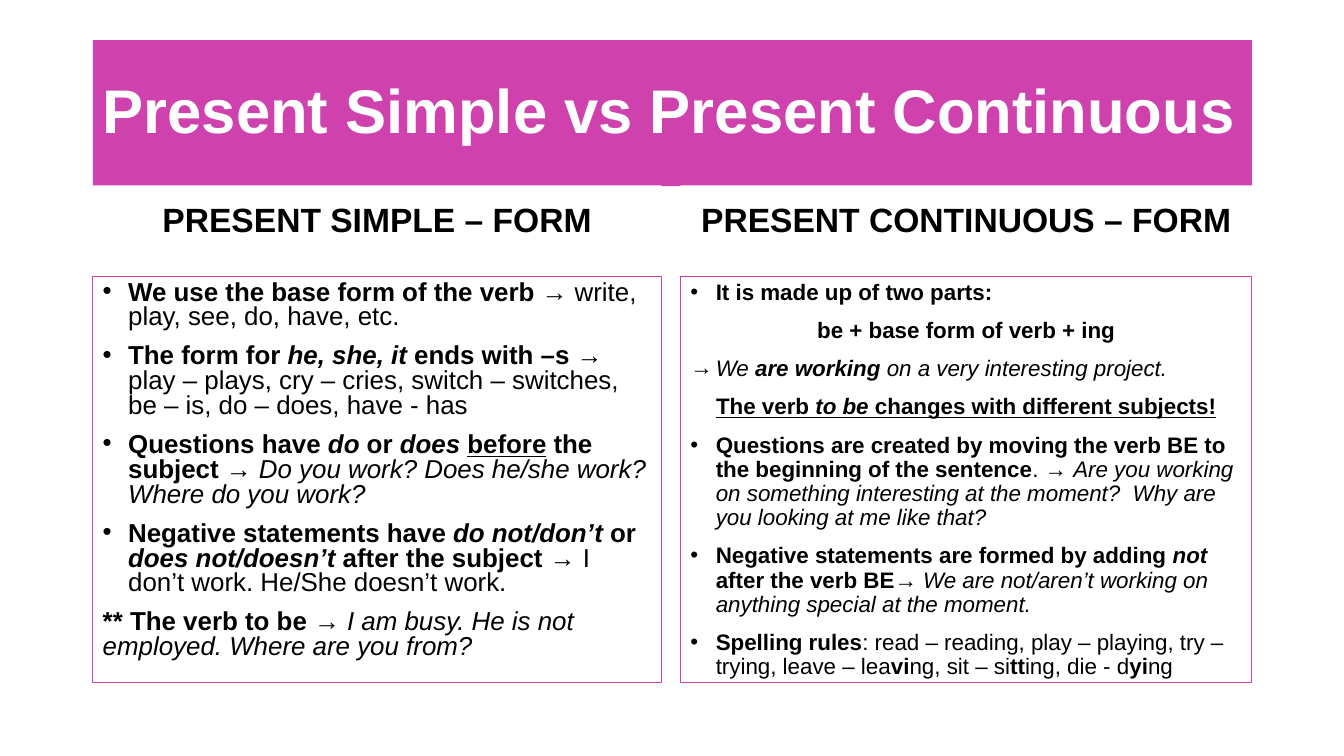
from dataclasses import dataclass

from lxml import etree
from pptx import Presentation
from pptx import util as u
from pptx.dml.color import RGBColor
from pptx.enum import text
from pptx.oxml import ns


@dataclass(frozen=True)
class Theme:
    font: str = "Arial"
    pink: RGBColor = RGBColor(0xCF, 0x41, 0xAD)
    white: RGBColor = RGBColor(0xFF, 0xFF, 0xFF)
    black: RGBColor = RGBColor(0, 0, 0)
    title_size: float = 44
    heading_size: float = 24
    simple_size: float = 18.5
    continuous_size: float = 16
    paragraph_gap: float = 10


THEME = Theme()
CENTER = text.PP_ALIGN.CENTER
HANGING = u.Cm(0.64)

# Each line: (bullet or None, alignment, runs); run styles: b bold, i italic, u underline
SIMPLE_FORM = [
    ("•", None, [("We use the base form of the verb ", "b"),
                 ("→ write, play, see, do, have, etc.", "")]),
    ("•", None, [("The form for ", "b"), ("he, she, it ", "bi"), ("ends with –s ", "b"),
                 ("→ play – plays, cry – cries, switch – switches, "
                  "be – is, do – does, have - has", "")]),
    ("•", None, [("Questions have ", "b"), ("do", "bi"), (" or ", "b"), ("does ", "bi"),
                 ("before", "bu"), (" the subject ", "b"), ("→ ", ""),
                 ("Do you work? Does he/she work? Where do you work?", "i")]),
    ("•", None, [("Negative statements have ", "b"), ("do not/don’t ", "bi"), ("or ", "b"),
                 ("does not/doesn’t ", "bi"), ("after the subject ", "b"),
                 ("→ I don’t work. He/She doesn’t work.", "")]),
    (None, None, [("** The verb to be ", "b"),
                  ("→ I am busy. He is not employed. Where are you from?", "i")]),
]
CONTINUOUS_FORM = [
    ("•", None, [("It is made up of two parts:", "b")]),
    (None, CENTER, [("be + base form of verb + ing", "b")]),
    ("→", None, [("We ", "i"), ("are working ", "bi"),
                 ("on a very interesting project.", "i")]),
    (None, CENTER, [("The verb ", "bu"), ("to be ", "biu"),
                    ("changes with different subjects!", "bu")]),
    ("•", None, [("Questions are created by moving the verb BE to the beginning "
                  "of the sentence", "b"), (". → ", ""),
                 ("Are you working on something interesting at the moment?  "
                  "Why are you looking at me like that?", "i")]),
    ("•", None, [("Negative statements are formed by adding ", "b"), ("not", "bi"),
                 (" after the verb BE", "b"),
                 ("→ We are not/aren’t working on anything special at the moment.", "i")]),
    ("•", None, [("Spelling rules", "b"),
                 (": read – reading, play – playing, try –trying, leave – lea", ""),
                 ("vi", "b"), ("ng, sit – si", ""), ("tt", "b"), ("ing, die - d", ""),
                 ("yi", "b"), ("ng", "")]),
]


def apply(target, values):
    for name, value in values.items():
        setattr(target, name, value)


def add_panel(slide, place, fill=None, line=None, **frame_format):
    """Add a text box and return its text frame."""
    panel = slide.shapes.add_textbox(*(u.Cm(length) for length in place))
    if fill is not None:
        panel.fill.solid()
        panel.fill.fore_color.rgb = fill
    if line is not None:
        panel.line.color.rgb = line
        panel.line.width = u.Pt(0.75)
    apply(panel.text_frame, {"word_wrap": True, **frame_format})
    return panel.text_frame


def add_bullet(paragraph, symbol):
    properties = paragraph._p.get_or_add_pPr()
    properties.set("marL", str(HANGING))
    properties.set("indent", str(-HANGING))
    etree.SubElement(properties, ns.qn("a:buFont"), typeface=THEME.font)
    etree.SubElement(properties, ns.qn("a:buChar"), char=symbol)


def write_lines(frame, lines, size, color, spacing):
    for index, (bullet, alignment, runs) in enumerate(lines):
        paragraph = frame.add_paragraph() if index else frame.paragraphs[0]
        if bullet:
            add_bullet(paragraph, bullet)
        apply(paragraph, {"alignment": alignment, "line_spacing": spacing})
        if index:
            paragraph.space_before = u.Pt(THEME.paragraph_gap)
        for words, style in runs:
            run = paragraph.add_run()
            run.text = words
            apply(run.font, {"name": THEME.font, "size": u.Pt(size), "bold": "b" in style,
                             "italic": "i" in style, "underline": "u" in style})
            run.font.color.rgb = color


def add_column(slide, left, width, heading, lines, size, spacing):
    heading_frame = add_panel(slide, (left, 4.67, width, 2.29), fill=THEME.white,
                              vertical_anchor=text.MSO_ANCHOR.BOTTOM,
                              margin_bottom=u.Cm(0.94))
    write_lines(heading_frame, [(None, CENTER, [(heading, "b")])],
                THEME.heading_size, THEME.black, 0.8)
    rules = add_panel(slide, (left, 6.96, width, 10.23), line=THEME.pink)
    write_lines(rules, lines, size, THEME.black, spacing)


def main():
    deck = Presentation()
    apply(deck, {"slide_width": u.Cm(33.87), "slide_height": u.Cm(19.05)})
    slide = deck.slides.add_slide(deck.slide_layouts[6])

    # Title band
    title = add_panel(slide, (2.34, 1.01, 29.21, 3.68), fill=THEME.pink,
                      vertical_anchor=text.MSO_ANCHOR.MIDDLE)
    write_lines(title, [(None, None, [("Present Simple vs Present Continuous", "b")])],
                THEME.title_size, THEME.white, 0.9)

    # The two tenses side by side
    add_column(slide, 2.34, 14.33, "PRESENT SIMPLE – FORM", SIMPLE_FORM,
               THEME.simple_size, 0.8)
    add_column(slide, 17.15, 14.4, "PRESENT CONTINUOUS – FORM", CONTINUOUS_FORM,
               THEME.continuous_size, 0.9)

    deck.save("out.pptx")


if __name__ == "__main__":
    main()
